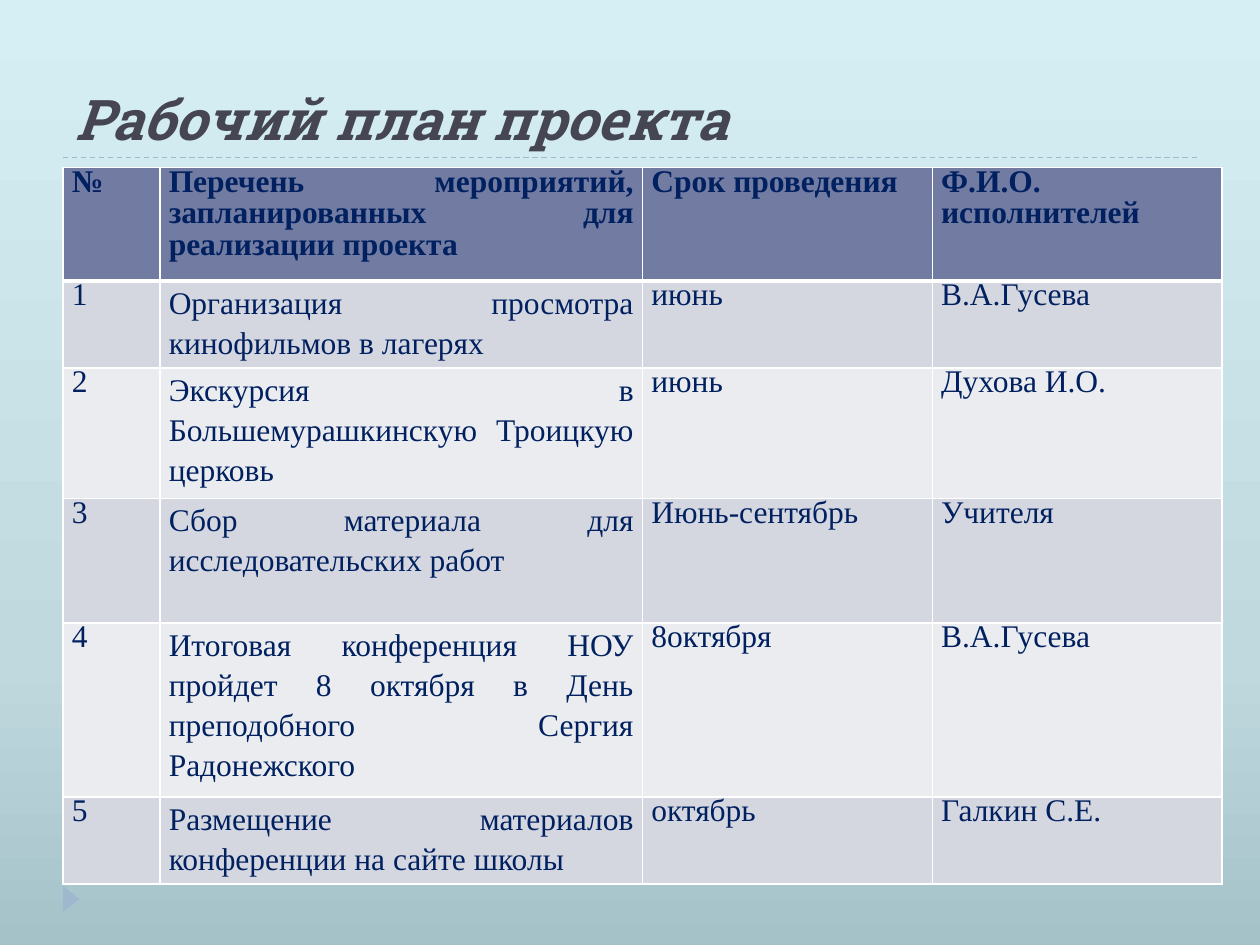
"""Build the project work plan slide with its schedule table."""
from copy import deepcopy

from pptx import Presentation
from pptx.dml.color import RGBColor
from pptx.enum.dml import MSO_LINE
from pptx.enum.shapes import MSO_CONNECTOR, MSO_SHAPE
from pptx.enum.text import MSO_ANCHOR, PP_ALIGN
from pptx.oxml.ns import qn
from pptx.oxml.xmlchemy import OxmlElement
from pptx.util import Inches, Pt

TITLE = "Рабочий план проекта"
ROWS = [
    ("№", "Перечень мероприятий, запланированных для реализации проекта",
     "Срок проведения ", "Ф.И.О. исполнителей"),
    ("1", "Организация просмотра кинофильмов в лагерях", "июнь", "В.А.Гусева"),
    ("2", "Экскурсия в Большемурашкинскую Троицкую церковь", "июнь", "Духова И.О."),
    ("3", "Сбор материала для исследовательских работ", "Июнь-сентябрь", "Учителя"),
    ("4", "Итоговая конференция НОУ пройдет 8 октября в День преподобного Сергия Радонежского ",
     "8октября", "В.А.Гусева"),
    ("5", "Размещение материалов конференции на сайте школы", "октябрь", "Галкин С.Е."),
]
COL_WIDTHS = [0.77, 3.83, 2.3, 2.3]
ROW_HEIGHTS = [0.9, 0.65, 0.95, 0.99, 1.27, 0.64]
COLORS = {"title": "464653", "text": "002060", "header": "727CA3", "odd": "D5D7E0",
          "even": "EBECF0", "border": "FFFFFF", "accent": "9FB8CD"}
BACKGROUND = [(0, "A5C2C9"), (0.3, "C0D9DF"), (1, "D5EFF5")]
RULES_Y = [6.95, 1.25]
TITLE_FONT = {"name": "Roboto Slab", "size": Pt(32), "bold": True, "italic": True}
CELL_FONT = {"name": "Times New Roman", "size": Pt(18)}
CELL_INSETS = {"margin_left": Inches(0.07), "margin_right": Inches(0.07),
               "margin_top": 0, "margin_bottom": 0}
FIXED_LINES = {"line_spacing": Pt(18), "space_after": Pt(6)}
LOOSE_LINES = {"line_spacing": 1.15}


def rgb(name):
    return RGBColor.from_string(COLORS[name])


def apply(obj, values):
    for key, value in values.items():
        setattr(obj, key, value)


def add_run(p, text, font, color):
    r = p.add_run()
    r.text = text
    apply(r.font, font)
    r.font.color.rgb = rgb(color)


def paint_background(s):
    fill = s.background.fill
    fill.gradient()
    fill.gradient_angle = 90
    gs_list = next(s._element.iter(qn("a:gsLst")))
    gs_list.append(deepcopy(gs_list[-1]))
    for stop, (position, color) in zip(fill.gradient_stops, BACKGROUND):
        stop.position = position
        stop.color.rgb = RGBColor.from_string(color)


def add_rule(s, y):
    line = s.shapes.add_connector(MSO_CONNECTOR.STRAIGHT, Inches(0.5), Inches(y),
                                  Inches(9.5), Inches(y))
    line.line.color.rgb = rgb("accent")
    line.line.width = Pt(0.75)
    line.line.dash_style = MSO_LINE.DASH
    line._element.spPr.append(OxmlElement("a:effectLst"))


def add_marker(s):
    sp = s.shapes.add_shape(MSO_SHAPE.ISOSCELES_TRIANGLE, Inches(0.46), Inches(7.07),
                            Inches(0.21), Inches(0.13))
    sp.rotation = 90
    sp.shadow.inherit = False
    sp.fill.solid()
    sp.fill.fore_color.rgb = rgb("accent")
    sp.line.fill.background()


def add_title(s):
    tf = s.shapes.add_textbox(Inches(0.5), Inches(0.17), Inches(9), Inches(1.08)).text_frame
    tf.word_wrap = True
    tf.vertical_anchor = MSO_ANCHOR.BOTTOM
    add_run(tf.paragraphs[0], TITLE, TITLE_FONT, "title")


def set_borders(cell, bottom):
    tc_pr = cell._tc.get_or_add_tcPr()
    for i, (side, width) in enumerate(zip("LRTB", (1, 1, 1, bottom))):
        ln = OxmlElement(f"a:ln{side}")
        ln.set("w", str(Pt(width)))
        fill = OxmlElement("a:solidFill")
        color = OxmlElement("a:srgbClr")
        color.set("val", COLORS["border"])
        fill.append(color)
        ln.append(fill)
        tc_pr.insert(i, ln)


def fill_cell(cell, text, row, col):
    header = row == 0
    apply(cell, CELL_INSETS)
    cell.fill.solid()
    cell.fill.fore_color.rgb = rgb("header" if header else "odd" if row % 2 else "even")
    set_borders(cell, 3 if header else 1)
    p = cell.text_frame.paragraphs[0]
    p.alignment = PP_ALIGN.JUSTIFY
    apply(p, LOOSE_LINES if col == 1 and not header else FIXED_LINES)
    add_run(p, text, {**CELL_FONT, "bold": header}, "text")


def add_plan(s):
    table = s.shapes.add_table(len(ROWS), len(COL_WIDTHS), Inches(0.5), Inches(1.33),
                               Inches(sum(COL_WIDTHS)), Inches(sum(ROW_HEIGHTS))).table
    table.horz_banding = False
    for column, width in zip(table.columns, COL_WIDTHS):
        column.width = Inches(width)
    for i, (height, texts) in enumerate(zip(ROW_HEIGHTS, ROWS)):
        table.rows[i].height = Inches(height)
        for j, text in enumerate(texts):
            fill_cell(table.cell(i, j), text, i, j)


def main():
    prs = Presentation()
    prs.slide_width, prs.slide_height = Inches(10), Inches(7.5)
    s = prs.slides.add_slide(prs.slide_layouts[6])
    paint_background(s)
    for y in RULES_Y:
        add_rule(s, y)
    add_marker(s)
    add_title(s)
    add_plan(s)
    prs.save("out.pptx")


if __name__ == "__main__":
    main()
